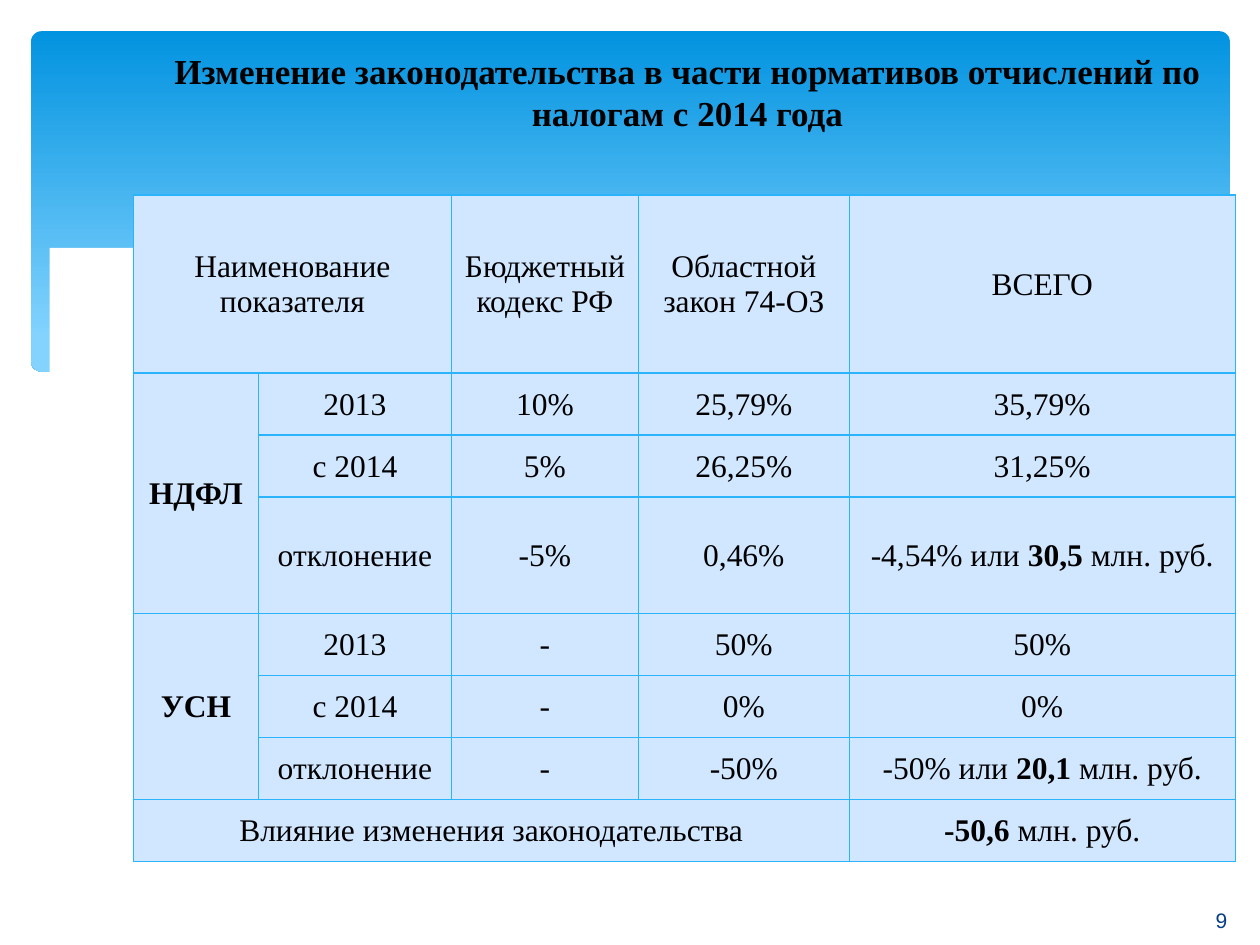
from lxml.etree import SubElement
from pptx import Presentation
from pptx.dml.color import RGBColor
from pptx.enum.shapes import MSO_SHAPE
from pptx.enum.text import MSO_ANCHOR, PP_ALIGN
from pptx.oxml.ns import qn
from pptx.util import Cm, Pt

COLORS = {
    "band_top": "0293E0",
    "band_bottom": "83D3FE",
    "paper": "FFFFFF",
    "cell": "D0E7FF",
    "border": "2BB4FC",
    "text": "000000",
    "number": "073E87",
}
TITLE_FONT = {"name": "Times New Roman", "size": Pt(20), "bold": True}
CELL_FONT = {"name": "Times New Roman", "size": Pt(18), "bold": False}
NUMBER_FONT = {"name": "Arial", "size": Pt(12), "bold": False}
CELL_FORMAT = {
    "margin_left": Cm(0.03),
    "margin_top": Cm(0.03),
    "margin_right": Cm(0.03),
    "margin_bottom": 0,
    "vertical_anchor": MSO_ANCHOR.MIDDLE,
}

WAVE = [
    (0.58, 5.41), (1.17, 5.16), (1.9, 4.95), (2.69, 4.8), (3.71, 4.7),
    (4.9, 4.67), (6.35, 4.72), (8, 4.93), (9.93, 5.26), (12.07, 5.77),
    (14.1, 6.22), (15.9, 6.55), (17.48, 6.81), (19.33, 6.99), (20.9, 7.04),
    (22.53, 6.88), (23.88, 6.58), (24.82, 6.25), (24.82, 8.36), (0.58, 8.36),
]

COLUMN_WIDTHS = [2.52, 3.89, 3.77, 4.25, 7.78]
ROW_HEIGHTS = [3.59, 1.25, 1.25, 2.34, 1.25, 1.25, 1.25, 1.25]
# Asterisks enclose bold text; None is a cell covered by a merged one.
ROWS = [
    ["Наименование показателя", None, "Бюджетный кодекс РФ", "Областной закон 74-ОЗ", "ВСЕГО"],
    ["*НДФЛ*", "2013", "10%", "25,79%", "35,79%"],
    [None, "с 2014", "5%", "26,25%", "31,25%"],
    [None, "отклонение", "-5%", "0,46%", "-4,54% или *30,5 *млн. руб."],
    ["*УСН*", "2013", "-", "50%", "50%"],
    [None, "с 2014", "-", "0%", "0%"],
    [None, "отклонение", "-", "-50%", "-50% или *20,1 *млн. руб."],
    ["Влияние изменения законодательства", None, None, None, "*-50,6 *млн. руб."],
]
MERGES = [((0, 0), (0, 1)), ((1, 0), (3, 0)), ((4, 0), (6, 0)), ((7, 0), (7, 3))]


def rgb(name):
    return RGBColor.from_string(COLORS[name])


def apply_format(target, values):
    for name, value in values.items():
        setattr(target, name, value)


def write_text(frame, text, font, color):
    """Fill the frame with one centred paragraph, bold between asterisks."""
    para = frame.paragraphs[0]
    para.alignment = PP_ALIGN.CENTER
    for index, part in enumerate(text.split("*")):
        if part:
            span = para.add_run()
            span.text = part
            apply_format(span.font, font)
            span.font.bold = font["bold"] or index % 2 == 1
            span.font.color.rgb = rgb(color)


def add_header_band(page):
    band = page.shapes.add_shape(
        MSO_SHAPE.ROUNDED_RECTANGLE, Cm(0.63), Cm(0.63), Cm(24.16), Cm(6.86))
    band.adjustments[0] = 0.03
    band.shadow.inherit = False
    band.line.fill.background()
    band.fill.gradient()
    band.fill.gradient_angle = 270
    stops = zip(band.fill.gradient_stops, ("band_top", "band_bottom"), (0, 0.9))
    for stop, color, position in stops:
        stop.color.rgb = rgb(color)
        stop.position = position


def add_wave(page):
    builder = page.shapes.build_freeform(*WAVE[0], scale=Cm(1))
    builder.add_line_segments(WAVE[1:], close=True)
    wave = builder.convert_to_shape()
    wave.shadow.inherit = False
    wave.fill.solid()
    wave.fill.fore_color.rgb = rgb("paper")
    wave.line.fill.background()


def place_title(page, text):
    title = page.shapes.title
    apply_format(title, {"left": Cm(2.9), "top": Cm(0.76),
                         "width": Cm(21.92), "height": Cm(2.16)})
    title.text_frame.vertical_anchor = MSO_ANCHOR.MIDDLE
    write_text(title.text_frame, text, TITLE_FONT, "text")
    # The title stands in front of the header band.
    title.element.getparent().append(title.element)


def add_borders(cell):
    properties = cell._tc.get_or_add_tcPr()
    for position, side in enumerate(("a:lnL", "a:lnR", "a:lnT", "a:lnB")):
        line = SubElement(properties, qn(side), w=str(Pt(0.75)))
        fill = SubElement(line, qn("a:solidFill"))
        SubElement(fill, qn("a:srgbClr"), val=COLORS["border"])
        properties.insert(position, line)


def add_rates_table(page):
    frame = page.shapes.add_table(
        len(ROWS), len(COLUMN_WIDTHS), Cm(2.69), Cm(3.93),
        Cm(sum(COLUMN_WIDTHS)), Cm(sum(ROW_HEIGHTS)))
    table = frame.table
    for column, width in zip(table.columns, COLUMN_WIDTHS):
        column.width = Cm(width)
    for row, height, texts in zip(table.rows, ROW_HEIGHTS, ROWS):
        row.height = Cm(height)
        for cell, text in zip(row.cells, texts):
            apply_format(cell, CELL_FORMAT)
            cell.fill.solid()
            cell.fill.fore_color.rgb = rgb("cell")
            add_borders(cell)
            if text:
                write_text(cell.text_frame, text, CELL_FONT, "text")
    for first, last in MERGES:
        table.cell(*first).merge(table.cell(*last))


def add_page_number(page, text):
    box = page.shapes.add_textbox(Cm(23.01), Cm(18.03), Cm(3.23), Cm(1.02))
    apply_format(box.text_frame, {"word_wrap": True,
                                  "vertical_anchor": MSO_ANCHOR.MIDDLE})
    write_text(box.text_frame, text, NUMBER_FONT, "number")


def main():
    deck = Presentation()
    apply_format(deck, {"slide_width": Cm(25.4), "slide_height": Cm(19.05)})
    page = deck.slides.add_slide(deck.slide_layouts[5])
    add_header_band(page)
    add_wave(page)
    place_title(page, "Изменение законодательства в части нормативов "
                      "отчислений по налогам с 2014 года")
    add_rates_table(page)
    add_page_number(page, "9")
    deck.save("out.pptx")


if __name__ == "__main__":
    main()
